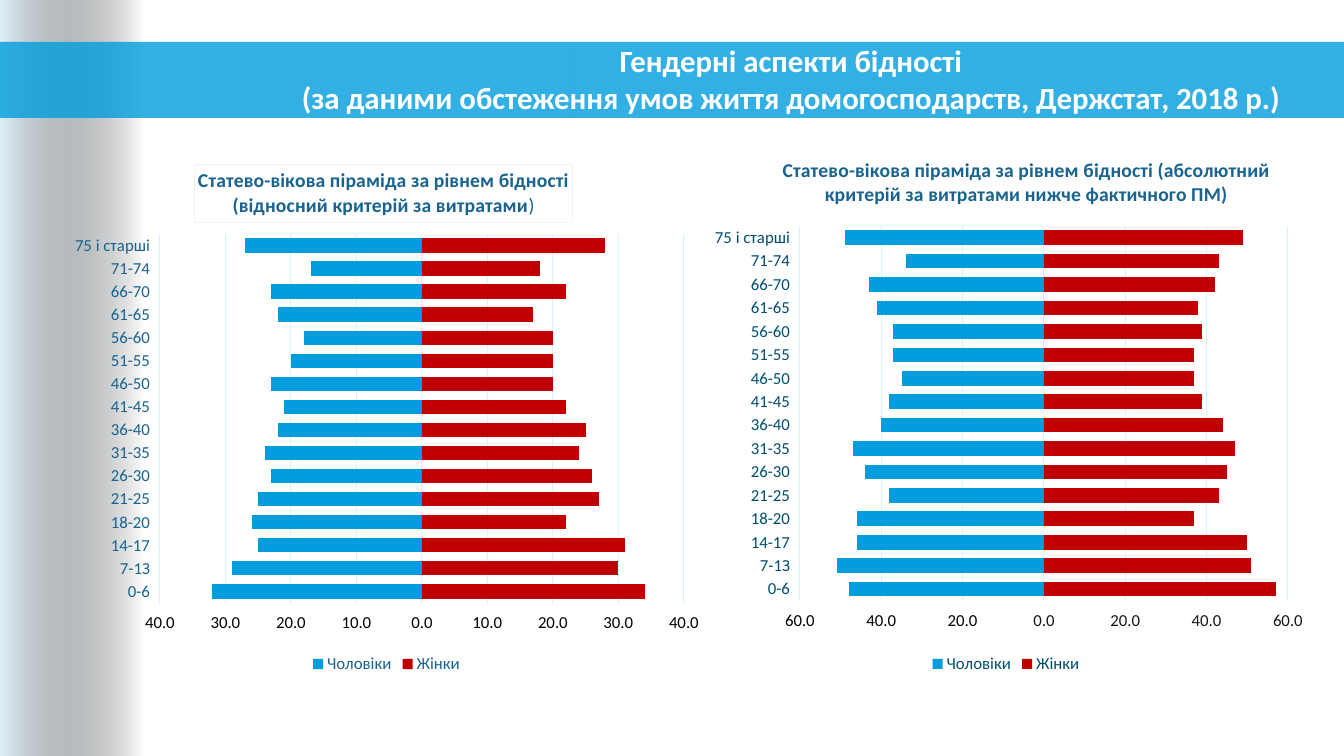
from dataclasses import dataclass
from typing import Any

import lxml.etree
import pptx
import pptx.chart.data
import pptx.dml.color
import pptx.enum.chart
import pptx.enum.shapes
import pptx.enum.text
import pptx.oxml
import pptx.oxml.ns
import pptx.util

EMU_PER_PX = 914400 / 100.8
FONT = "Calibri"
BLUE, RED, TITLE_BLUE, GRID = "009DDC", "C00000", "18638F", "D4F3FF"
AGES = ["0-6", "7-1З", "14-17", "18-20", "21-25", "26-30", "31-35", "36-40",
        "41-45", "46-50", "51-55", "56-60", "61-65", "66-70", "71-74", "75 і старші"]


@dataclass
class Pyramid:
    box: tuple[int, int, int, int]
    title: list[list[tuple[str, bool]]]  # lines of (text, bold)
    title_at: tuple[int, int]            # px on the slide
    title_border: bool
    plot: tuple[int, int, int, int]      # px on the slide
    label_color: str
    value_color: str
    limit: int
    step: int
    men: list[int]
    women: list[int]


PYRAMIDS = [
    Pyramid((62, 149, 649, 529),
            [[("Статево-вікова піраміда за рівнем бідності", True)],
             [("(відносний критерій за витратами", True), (")", False)]],
            (195, 164), True, (160, 234, 524, 369), TITLE_BLUE, "000000", 40, 10,
            [32, 29, 25, 26, 25, 23, 24, 22, 21, 23, 20, 18, 22, 23, 17, 27],
            [34, 30, 31, 22, 27, 26, 24, 25, 22, 20, 20, 20, 17, 22, 18, 28]),
    Pyramid((691, 132, 630, 546),
            [[("Статево-вікова піраміда за рівнем бідності (абсолютний "
               "критерій за витратами нижче фактичного ПМ)", True)]],
            (779, 153), False, (800, 226, 488, 375), "004E6E", "161616", 60, 20,
            [48, 51, 46, 46, 38, 44, 47, 40, 38, 35, 37, 37, 41, 43, 34, 49],
            [57, 51, 50, 37, 43, 45, 47, 44, 39, 37, 37, 39, 38, 42, 43, 49]),
]


def px(n: int) -> pptx.util.Emu:
    return pptx.util.Emu(round(n * EMU_PER_PX))


def rgb(color: str) -> pptx.dml.color.RGBColor:
    return pptx.dml.color.RGBColor.from_string(color)


def format_font(font: Any, size: int, color: str, bold: bool = False) -> None:
    font.name, font.size, font.bold = FONT, pptx.util.Pt(size), bold
    font.color.rgb = rgb(color)


def add_text(p: Any, text: str, *, size: int, color: str, bold: bool = False) -> None:
    r = p.add_run()
    r.text = text
    format_font(r.font, size, color, bold)


def set_alpha(color_el: Any, percent: int) -> None:
    alpha = lxml.etree.SubElement(color_el, pptx.oxml.ns.qn("a:alpha"))
    alpha.set("val", str(percent * 1000))


def add_rect(slide: Any, *box: int) -> Any:
    sp = slide.shapes.add_shape(pptx.enum.shapes.MSO_SHAPE.RECTANGLE, *map(px, box))
    sp.shadow.inherit = False
    sp.line.fill.background()
    return sp


def set_layout(parent: Any, index: int, inner: bool, **fractions: float) -> None:
    """Give a chart part a manual place, in fractions of the chart."""
    for old in parent.findall(pptx.oxml.ns.qn("c:layout")):
        parent.remove(old)
    parts = [("layoutTarget", "inner")] if inner else []
    parts += [("xMode", "edge"), ("yMode", "edge")]
    parts += [(name, f"{value:.4f}") for name, value in fractions.items()]
    body = "".join(f'<c:{name} val="{value}"/>' for name, value in parts)
    parent.insert(index, pptx.oxml.parse_xml(
        f'<c:layout {pptx.oxml.ns.nsdecls("c")}><c:manualLayout>{body}'
        '</c:manualLayout></c:layout>'))


def add_title(chart: Any, pyramid: Pyramid) -> None:
    left, top, width, height = pyramid.box
    title = chart.chart_title
    tf = title.text_frame
    for i, line in enumerate(pyramid.title):
        p = tf.add_paragraph() if i else tf.paragraphs[0]
        p.alignment = pptx.enum.text.PP_ALIGN.CENTER
        for text, bold in line:
            add_text(p, text, size=14, color=TITLE_BLUE, bold=bold)
    if pyramid.title_border:
        title.format.line.color.rgb = rgb("F2F2F2")
        title.format.line.width = pptx.util.Pt(0.75)
    x, y = pyramid.title_at
    set_layout(title._element, 1, False, x=(x - left) / width, y=(y - top) / height)


def add_pyramid(slide: Any, pyramid: Pyramid) -> None:
    enums = pptx.enum.chart
    left, top, width, height = pyramid.box
    data = pptx.chart.data.CategoryChartData()
    data.categories = AGES
    data.add_series("Чоловіки", [-v for v in pyramid.men])
    data.add_series("Жінки", pyramid.women)
    chart = slide.shapes.add_chart(
        enums.XL_CHART_TYPE.BAR_STACKED, *map(px, pyramid.box), data).chart
    format_font(chart.font, 10, BLUE)
    add_title(chart, pyramid)

    # Bars
    plot = chart.plots[0]
    plot.gap_width, plot.overlap, plot.vary_by_categories = 60, 100, False
    for series, color in zip(plot.series, (BLUE, RED)):
        series.invert_if_negative = False
        series.format.fill.solid()
        series.format.fill.fore_color.rgb = rgb(color)
    x, y, w, h = pyramid.plot
    set_layout(chart._chartSpace.chart.plotArea, 0, True, x=(x - left) / width,
               y=(y - top) / height, w=w / width, h=h / height)

    # Axes
    ages, values = chart.category_axis, chart.value_axis
    ages.tick_label_position = enums.XL_TICK_LABEL_POSITION.LOW
    ages.major_tick_mark = enums.XL_TICK_MARK.NONE
    values.major_tick_mark = enums.XL_TICK_MARK.OUTSIDE
    values.minimum_scale, values.maximum_scale = -pyramid.limit, pyramid.limit
    values.major_unit = pyramid.step
    values.tick_labels.number_format = "0.0;[Black]0.0"
    values.tick_labels.number_format_is_linked = False
    values.format.line.fill.background()
    for line in (ages.format.line, values.major_gridlines.format.line):
        line.color.rgb = rgb(GRID)
        line.width = pptx.util.Pt(0.75)
    format_font(ages.tick_labels.font, 12, pyramid.label_color)
    format_font(values.tick_labels.font, 12, pyramid.value_color)

    # Legend
    chart.has_legend = True
    chart.legend.position = enums.XL_LEGEND_POSITION.BOTTOM
    chart.legend.include_in_layout = False
    format_font(chart.legend.font, 12, pyramid.label_color)


def add_background(slide: Any) -> None:
    # Fading strip on the left
    fill = add_rect(slide, 0, 0, 145, 756).fill
    fill.gradient()
    fill.gradient_angle = 0
    for stop, color, position in zip(fill.gradient_stops, ("E1F1FA", "000000"), (0, 1)):
        stop.color.rgb = rgb(color)
        stop.position = position
    set_alpha(fill.gradient_stops[1]._gs[0], 0)

    # Title band in two parts
    split = 572
    for left, width in ((split, 1344 - split), (0, split)):
        sp = add_rect(slide, left, 42, width, 76)
        sp.fill.solid()
        sp.fill.fore_color.rgb = rgb(BLUE)
        set_alpha(sp._element.spPr.find(".//" + pptx.oxml.ns.qn("a:srgbClr")), 80)


def add_heading(slide: Any) -> None:
    tf = slide.shapes.add_textbox(*map(px, (261, 46, 1060, 66))).text_frame
    tf.word_wrap = True
    tf.vertical_anchor = pptx.enum.text.MSO_ANCHOR.MIDDLE
    lines = ("Гендерні аспекти бідності",
             "(за даними обстеження умов життя домогосподарств, Держстат, 2018 р.)")
    for i, line in enumerate(lines):
        p = tf.add_paragraph() if i else tf.paragraphs[0]
        p.alignment = pptx.enum.text.PP_ALIGN.CENTER
        add_text(p, line, size=22, color="FFFFFF", bold=True)


def main() -> None:
    prs = pptx.Presentation()
    prs.slide_width, prs.slide_height = px(1344), px(756)
    slide = prs.slides.add_slide(prs.slide_layouts[6])
    add_background(slide)
    add_heading(slide)
    for pyramid in PYRAMIDS:
        add_pyramid(slide, pyramid)
    prs.save("out.pptx")


if __name__ == "__main__":
    main()
